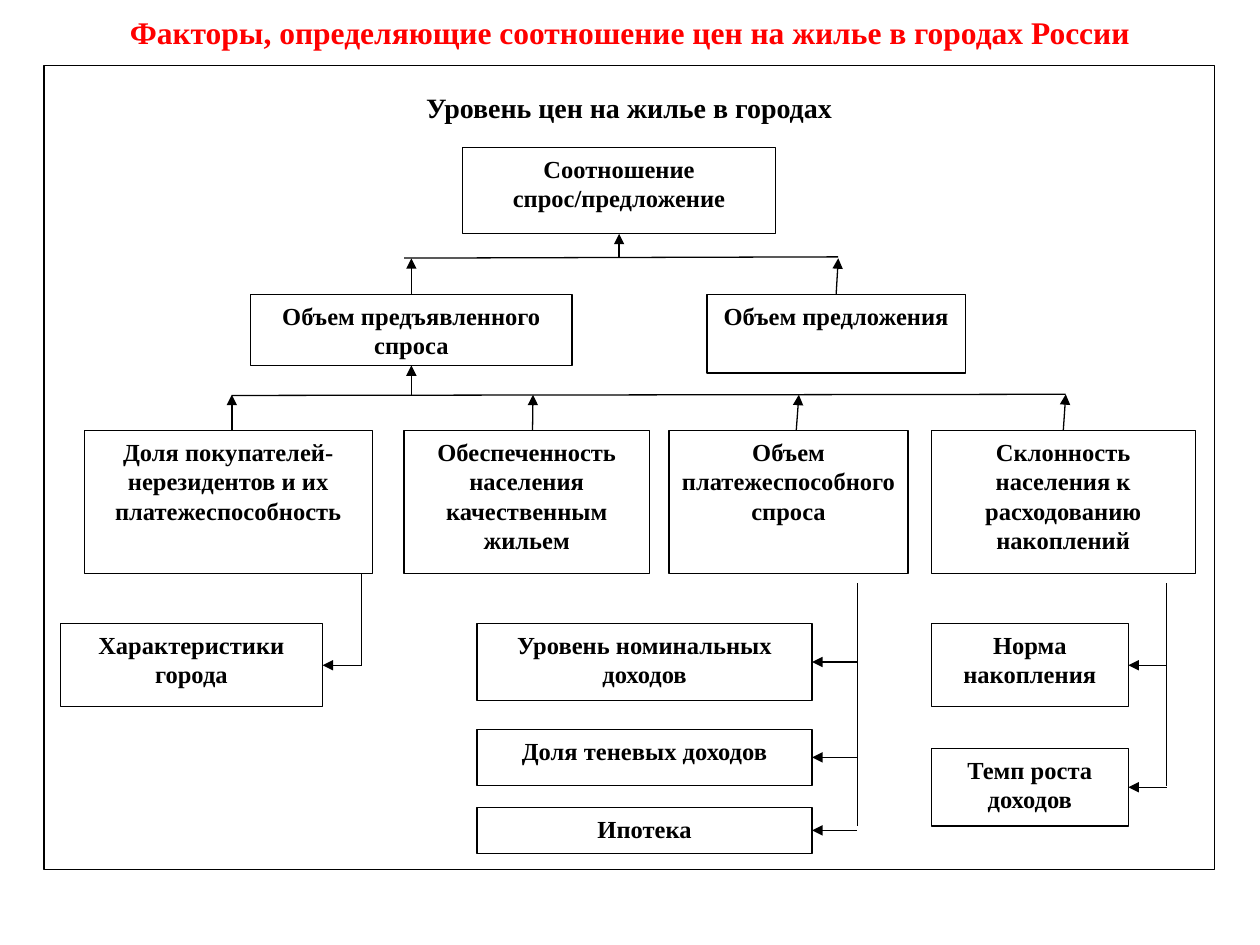
from lxml import etree
from pptx import Presentation
from pptx import util as u
from pptx.dml import color
from pptx.enum import shapes, text
from pptx.oxml import ns

TOP, BOTTOM, RIGHT = 0, 2, 3


def rgb(value):
    """Turn a hex string into a colour."""
    return color.RGBColor.from_string(value)


def format_text(tf, size, hex_color="000000"):
    """Centre the text and set its font."""
    for p in tf.paragraphs:
        p.alignment = text.PP_ALIGN.CENTER
        for r in p.runs:
            r.font.name = "Times New Roman"
            r.font.size = u.Pt(size)
            r.font.bold = True
            r.font.color.rgb = rgb(hex_color)


def add_title(s, label):
    """Place the red slide title."""
    sp = s.shapes.title
    sp.left, sp.top, sp.width, sp.height = map(u.Pt, (64, 3.6, 592, 29))
    tf = sp.text_frame
    tf.text = label
    tf.word_wrap = False
    tf.vertical_anchor = text.MSO_ANCHOR.MIDDLE
    format_text(tf, 18, "FF0000")


def add_box(s, label, x, y, w, h, size=14, outlined=True, filled=True):
    """Add a rectangle with a centred label at the top."""
    sp = s.shapes.add_shape(shapes.MSO_SHAPE.RECTANGLE, *map(u.Pt, (x, y, w, h)))
    sp.shadow.inherit = False
    if filled:
        sp.fill.solid()
        sp.fill.fore_color.rgb = rgb("FFFFFF")
    else:
        sp.fill.background()
    if outlined:
        sp.line.color.rgb = rgb("000000")
        sp.line.width = u.Pt(0.75)
    else:
        sp.line.fill.background()
    tf = sp.text_frame
    tf.word_wrap = True
    tf.vertical_anchor = text.MSO_ANCHOR.TOP
    tf.text = label
    format_text(tf, size)
    return sp


def add_line(s, x1, y1, x2, y2, arrow=False):
    """Add a thin black line, with an arrowhead at its end if wanted."""
    line = s.shapes.add_connector(
        shapes.MSO_CONNECTOR.STRAIGHT, *map(u.Pt, (x1, y1, x2, y2)))
    line.line.color.rgb = rgb("000000")
    line.line.width = u.Pt(0.75)
    if arrow:
        ln = line.line._get_or_add_ln()
        etree.SubElement(ln, ns.qn("a:tailEnd"), type="triangle")
    etree.SubElement(line._element.spPr, ns.qn("a:effectLst"))
    return line


def add_branches(s, trunk_x, boxes):
    """Point an arrow from a vertical trunk to the right side of each box."""
    for sp in boxes:
        y = (sp.top + sp.height / 2) / u.Pt(1)
        add_line(s, trunk_x, y, trunk_x - 20, y, True).end_connect(sp, RIGHT)


def main():
    """Build the slide."""
    prs = Presentation()
    prs.slide_width, prs.slide_height = u.Pt(720), u.Pt(540)
    s = prs.slides.add_slide(prs.slide_layouts[5])
    add_title(s, "Факторы, определяющие соотношение цен на жилье в городах России")
    add_box(s, "", 25.2, 37.4, 669, 459.4, filled=False)
    add_box(s, "Уровень цен на жилье в городах", 165.5, 48.2, 388, 27.4,
            size=16, outlined=False)

    ratio = add_box(s, "Соотношение спрос/предложение", 264.2, 84.2, 179.2, 49.4)
    demand = add_box(s, "Объем предъявленного спроса", 143.3, 168.5, 183.6, 40.3)
    supply = add_box(s, "Объем предложения", 404, 168.5, 147.6, 44.8)
    factors = [add_box(s, label, x, 246.2, w, 81.4) for label, x, w in (
        ("Доля покупателей-нерезидентов и их платежеспособность", 48.2, 164.5),
        ("Обеспеченность населения качественным жильем", 230.8, 140.4),
        ("Объем платежеспособного спроса", 382.3, 136.6),
        ("Склонность населения к расходованию накоплений", 532.2, 150.8))]
    incomes = [add_box(s, label, 272.6, y, 191.5, h) for label, y, h in (
        ("Уровень номинальных доходов", 356.4, 43.8),
        ("Доля теневых доходов", 416.8, 32),
        ("Ипотека", 461.4, 26.2))]
    savings = [add_box(s, label, 532.2, y, 112.6, h) for label, y, h in (
        ("Норма накопления", 356.4, 47.5),
        ("Темп роста доходов", 427.7, 44.3))]
    city = add_box(s, "Характеристики города", 34.4, 356.4, 150, 47.5)

    add_line(s, 231, 147.5, 479, 146.8)
    add_line(s, 353.8, 147, 353.8, 133.6, True).end_connect(ratio, BOTTOM)
    add_line(s, 235.1, 168.5, 235.1, 147.6, True).begin_connect(demand, TOP)
    add_line(s, 477.8, 168.5, 479, 147.6, True).begin_connect(supply, TOP)

    add_line(s, 132.5, 226, 609, 225.3)
    add_line(s, 235.1, 226, 235.1, 208.8, True).end_connect(demand, BOTTOM)
    for x1, x2 in ((132.5, 132.5), (304.3, 304.6), (455, 456.5)):
        add_line(s, x1, 246.2, x2, 225.6, True)
    add_line(s, 607.6, 246.2, 609, 225.3, True).begin_connect(factors[3], TOP)

    for x, top, bottom, boxes in ((206.6, 327.6, 380.2, [city]),
                                  (489.8, 333.4, 472, incomes),
                                  (666.6, 333.4, 449.3, savings)):
        add_line(s, x, top, x, bottom)
        add_branches(s, x, boxes)
    prs.save("out.pptx")


if __name__ == "__main__":
    main()
